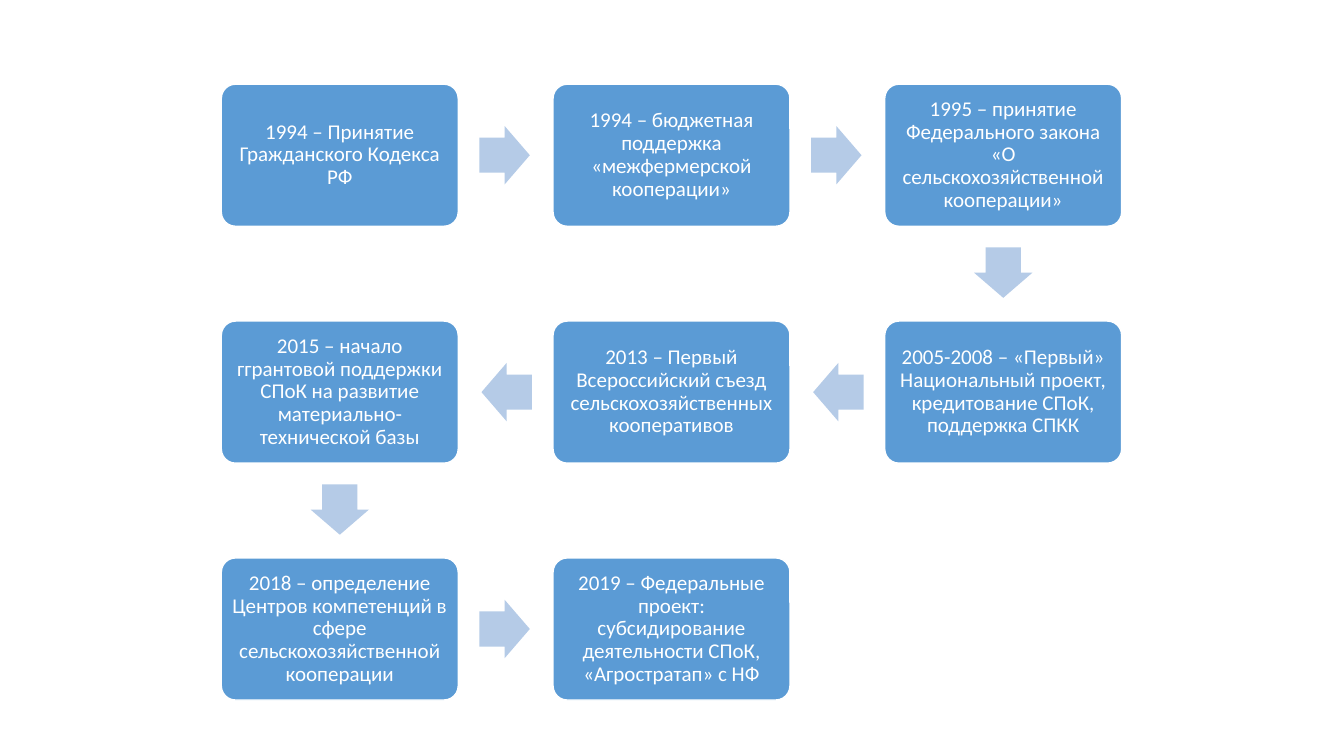
"""Builds a slide with a snaking timeline of agricultural cooperation milestones."""
from math import atan2, cos, degrees, sin

from pptx import Presentation
from pptx.dml.color import RGBColor
from pptx.enum.shapes import MSO_SHAPE as Preset
from pptx.enum.text import MSO_ANCHOR as Anchor, PP_ALIGN as Align
from pptx.util import Inches, Pt

MILESTONES = [
    "1994 – Принятие Гражданского Кодекса РФ",
    "1994 – бюджетная поддержка «межфермерской кооперации»",
    "1995 – принятие Федерального закона «О сельскохозяйственной кооперации»",
    "2005-2008 – «Первый» Национальный проект, кредитование СПоК, поддержка СПКК",
    "2013 – Первый Всероссийский съезд сельскохозяйственных кооперативов",
    "2015 – начало ггрантовой поддержки СПоК на развитие материально-технической базы",
    "2018 – определение Центров компетенций в сфере сельскохозяйственной кооперации",
    "2019 – Федеральные проект: субсидирование деятельности СПоК, «Агростратап» с НФ",
]
THEME = {
    "box": RGBColor.from_string("5B9BD5"),
    "arrow": RGBColor.from_string("B5CBE7"),
    "white": RGBColor.from_string("FFFFFF"),
    "font": "Calibri",
    "size": Pt(15),
    "outline": Pt(1),
}
COLUMNS = 3
FIRST_CENTER = (3.37, 1.54)
PITCH = (3.29, 2.35)
BOX_SIZE = (2.35, 1.41)
ARROW_SIZE = (0.5, 0.58)
ARROW_SETBACK = 0.01
FRAME_FORMAT = {
    "word_wrap": True,
    "vertical_anchor": Anchor.MIDDLE,
    **{f"margin_{side}": Inches(0.06) for side in ("left", "top", "right", "bottom")},
}
PARAGRAPH_FORMAT = {"alignment": Align.CENTER, "line_spacing": 0.9}
FONT_FORMAT = {"name": THEME["font"], "size": THEME["size"]}


def apply_format(target, values):
    """Set each named attribute on the target."""
    for name, value in values.items():
        setattr(target, name, value)


def milestone_center(index):
    """Return the center of a milestone; every second row runs backwards."""
    row, step = divmod(index, COLUMNS)
    column = COLUMNS - 1 - step if row % 2 else step
    return FIRST_CENTER[0] + column * PITCH[0], FIRST_CENTER[1] + row * PITCH[1]


def add_centered(slide, preset, center, size, fill, adjustments):
    """Add a filled preset shape around a center point."""
    left, top = (middle - length / 2 for middle, length in zip(center, size))
    shape = slide.shapes.add_shape(preset, *map(Inches, (left, top, *size)))
    shape.shadow.inherit = False
    shape.fill.solid()
    shape.fill.fore_color.rgb = fill
    for position, value in enumerate(adjustments):
        shape.adjustments[position] = value
    return shape


def add_milestone(slide, text, center):
    """Add a rounded box with its milestone text."""
    box = add_centered(slide, Preset.ROUNDED_RECTANGLE, center, BOX_SIZE, THEME["box"], [0.1])
    box.line.color.rgb = THEME["white"]
    box.line.width = THEME["outline"]
    apply_format(box.text_frame, FRAME_FORMAT)
    paragraph = box.text_frame.paragraphs[0]
    apply_format(paragraph, PARAGRAPH_FORMAT)
    run = paragraph.add_run()
    run.text = text
    apply_format(run.font, FONT_FORMAT)
    run.font.color.rgb = THEME["white"]


def add_step_arrow(slide, start, end):
    """Add an arrow between two milestones, turned towards the later one."""
    angle = atan2(end[1] - start[1], end[0] - start[0])
    center = (
        (start[0] + end[0]) / 2 - ARROW_SETBACK * cos(angle),
        (start[1] + end[1]) / 2 - ARROW_SETBACK * sin(angle),
    )
    arrow = add_centered(slide, Preset.RIGHT_ARROW, center, ARROW_SIZE, THEME["arrow"], [0.6, 0.5])
    arrow.line.fill.background()
    arrow.rotation = degrees(angle)


def main():
    """Build and save the presentation."""
    deck = Presentation()
    apply_format(deck, {"slide_width": Inches(13.33), "slide_height": Inches(7.5)})
    slide = deck.slides.add_slide(deck.slide_layouts[6])
    centers = [milestone_center(index) for index in range(len(MILESTONES))]
    for text, center in zip(MILESTONES, centers):
        add_milestone(slide, text, center)
    for start, end in zip(centers, centers[1:]):
        add_step_arrow(slide, start, end)
    deck.save("out.pptx")


if __name__ == "__main__":
    main()
